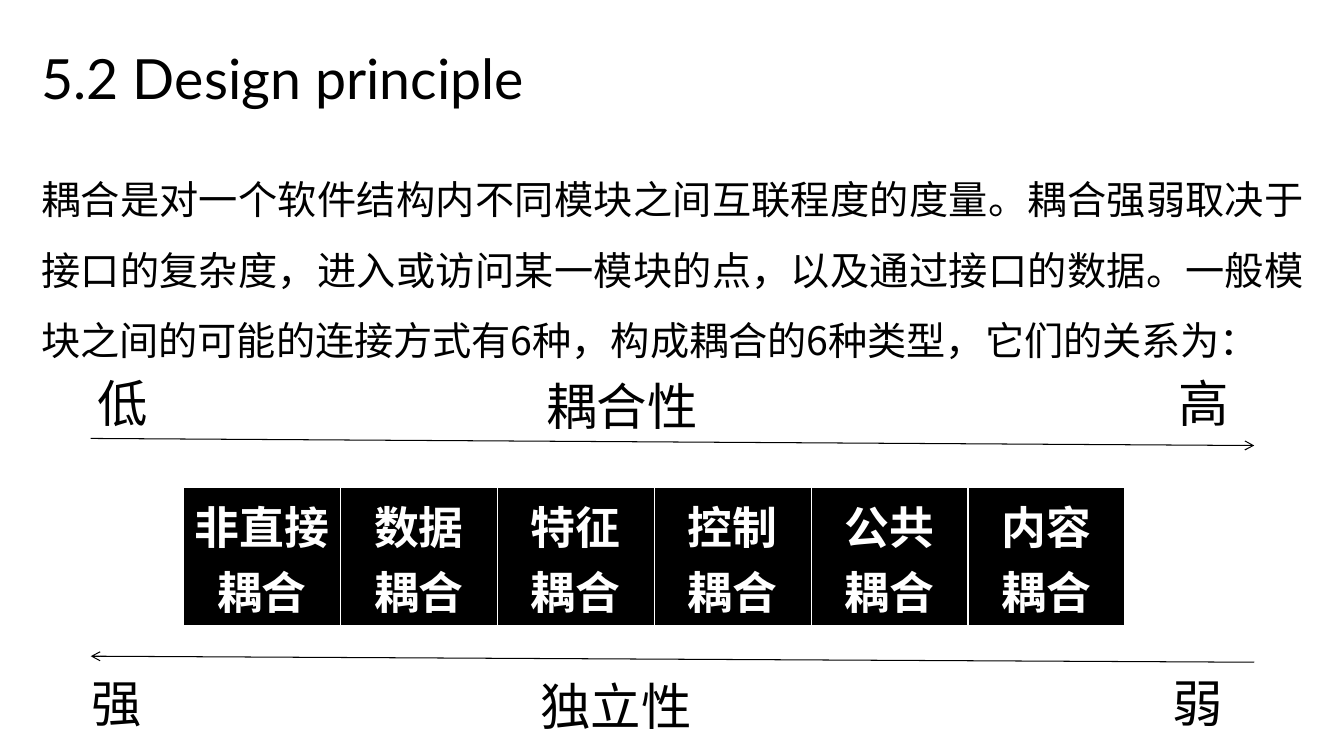
from lxml.etree import SubElement
from pptx import Presentation
from pptx.dml.color import RGBColor
from pptx.enum.shapes import MSO_CONNECTOR
from pptx.enum.text import MSO_ANCHOR, PP_ALIGN
from pptx.oxml.ns import qn
from pptx.util import Inches, Pt

BLACK, WHITE = "000000", "FFFFFF"
CJK = "Noto Sans CJK SC"


def color(value):
    return RGBColor.from_string(value)


def write(tf, text, size=36, font=CJK, fill=BLACK, bold=False,
          align=PP_ALIGN.CENTER, spacing=None):
    tf.word_wrap = True
    for i, line in enumerate(text.split("\n")):
        p = tf.paragraphs[0] if i == 0 else tf.add_paragraph()
        p.alignment = align
        p.space_before = Pt(0)
        p.line_spacing = spacing
        r = p.add_run()
        r.text = line
        r.font.size = Pt(size)
        r.font.name = font
        r.font.bold = bold
        r.font.color.rgb = color(fill)
        SubElement(r.font._element, qn("a:ea")).set("typeface", CJK)


class Deck:
    def __init__(self, prs):
        self.s = prs.slides.add_slide(prs.slide_layouts[5])

    def title(self, text, x, y, w, h):
        sp = self.s.shapes.title
        sp.left, sp.top, sp.width, sp.height = map(Inches, (x, y, w, h))
        sp.text_frame.vertical_anchor = MSO_ANCHOR.MIDDLE
        write(sp.text_frame, text, size=39.6, font="Lato",
              align=PP_ALIGN.LEFT, spacing=0.9)

    def text(self, text, x, y, w, h, anchor=MSO_ANCHOR.MIDDLE, **style):
        sp = self.s.shapes.add_textbox(*map(Inches, (x, y, w, h)))
        sp.text_frame.vertical_anchor = anchor
        write(sp.text_frame, text, **style)

    def arrow(self, x1, y1, x2, y2, end):
        sp = self.s.shapes.add_connector(
            MSO_CONNECTOR.STRAIGHT, *map(Inches, (x1, y1, x2, y2)))
        sp.line.color.rgb = color(BLACK)
        sp.line.width = Pt(0.75)
        SubElement(sp.line._get_or_add_ln(), qn("a:" + end)).set("type", "arrow")
        SubElement(sp._element.spPr, qn("a:effectLst"))

    def table(self, labels, x, y, w, h):
        table = self.s.shapes.add_table(
            1, len(labels), *map(Inches, (x, y, w, h))).table
        table.horz_banding = False
        for cell, label in zip(table.rows[0].cells, labels):
            cell.fill.solid()
            cell.fill.fore_color.rgb = color(BLACK)
            cell.vertical_anchor = MSO_ANCHOR.MIDDLE
            write(cell.text_frame, label, size=32, font="Calibri",
                  fill=WHITE, bold=True)


def main():
    prs = Presentation()
    prs.slide_width, prs.slide_height = Inches(13.33), Inches(7.5)
    deck = Deck(prs)
    deck.title("5.2 Design principle", 0.31, 0.43, 9.91, 0.75)
    deck.text(
        "耦合是对一个软件结构内不同模块之间互联程度的度量。耦合强弱取决于"
        "接口的复杂度，进入或访问某一模块的点，以及通过接口的数据。一般模"
        "块之间的可能的连接方式有6种，构成耦合的6种类型，它们的关系为：",
        0.31, 1.46, 12.73, 2.52, anchor=MSO_ANCHOR.TOP, size=28,
        align=PP_ALIGN.JUSTIFY, spacing=Pt(50.4))

    kinds = ["数据", "特征", "控制", "公共", "内容"]
    labels = ["非直接耦合"] + [kind + "\n耦合" for kind in kinds]
    deck.table(labels, 1.82, 4.84, 9.34, 1.37)

    scales = [
        (("低", "耦合性", "高"), 0.72, 3.49, 4.35, 4.42, "tailEnd"),
        (("强", "独立性", "弱"), 0.66, 6.47, 6.51, 6.57, "headEnd"),
    ]
    for (left, name, right), x, y, y1, y2, end in scales:
        deck.arrow(0.9, y1, 12.44, y2, end)
        deck.text(left, x, y, 1, 1)
        deck.text(name, x + 4.02, y + 0.03, 2.86, 1)
        deck.text(right, x + 10.72, y, 1, 1)
    prs.save("out.pptx")


if __name__ == "__main__":
    main()
